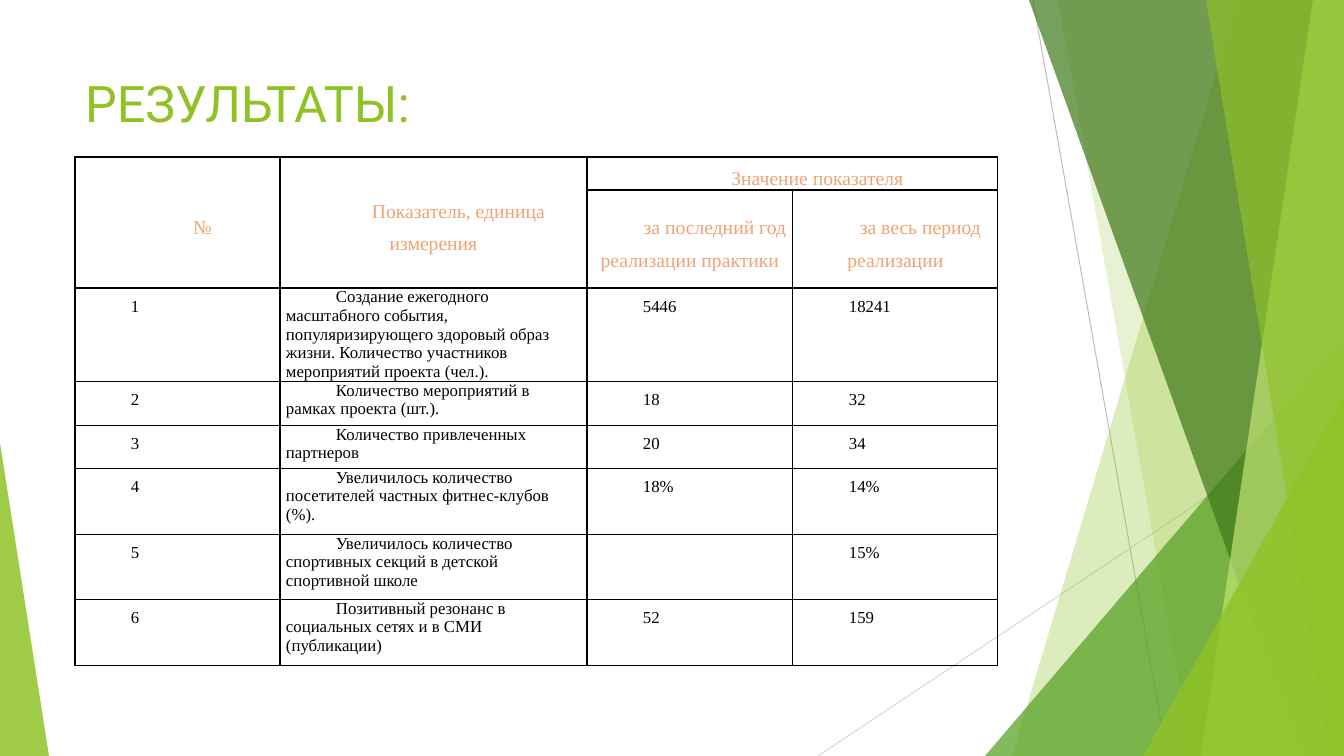
from lxml import etree
from pptx import Presentation, util as u
from pptx.dml.color import RGBColor
from pptx.enum import shapes as sh, text as tx
from pptx.oxml.ns import qn

PX = 12192000 / 1344
WIDE, TALL = 1344, 756

LIME = RGBColor(0x90, 0xC2, 0x26)
GREEN = RGBColor(0x54, 0xA0, 0x21)
DARK = RGBColor(0x3F, 0x78, 0x19)
PALE = RGBColor(0xC0, 0xE4, 0x74)
GREY = RGBColor(0xBF, 0xBF, 0xBF)
LIGHT = RGBColor(0xD9, 0xD9, 0xD9)
PEACH = RGBColor(0xF1, 0xA3, 0x74)
BLACK = RGBColor(0, 0, 0)


def px(n):
    return u.Emu(round(n * PX))


def tint(shape, color, alpha):
    """Fill without outline; alpha is the opacity in percent."""
    shape.shadow.inherit = False
    shape.line.fill.background()
    shape.fill.solid()
    shape.fill.fore_color.rgb = color
    node = shape._element.spPr.find(".//" + qn("a:srgbClr"))
    etree.SubElement(node, qn("a:alpha")).set("val", str(alpha * 1000))


prs = Presentation()
prs.slide_width, prs.slide_height = px(WIDE), px(TALL)
slide = prs.slides.add_slide(prs.slide_layouts[5])
parts = slide.shapes

# Background lines and facets
for x1, y1, x2, y2, color in [
    (1033, 0, 1167, TALL, GREY),
    (WIDE, 406, 818, TALL, LIGHT),
]:
    line = parts.add_connector(sh.MSO_CONNECTOR.STRAIGHT, px(x1), px(y1), px(x2), px(y2))
    line.line.color.rgb = color
    line.line.width = u.Pt(0.75)
    etree.SubElement(line._element.spPr, qn("a:effectLst"))

# Facets at the right edge: (top x, bottom x), or (left, top) for a triangle
for kind, a, b, color, alpha in [
    ("band", 1238, 1012, LIME, 30),
    ("band", 1058, 1192, LIME, 20),
    ("peak", 985, 336, GREEN, 72),
    ("band", 1029, 1301, DARK, 70),
    ("band", 1313, 1201, PALE, 70),
    ("band", 1206, 1329, LIME, 65),
    ("peak", 1143, 396, LIME, 80),
]:
    if kind == "band":
        path = parts.build_freeform(a, 0, scale=PX)
        path.add_line_segments([(WIDE, 0), (WIDE, TALL), (b, TALL)])
        facet = path.convert_to_shape()
    else:
        facet = parts.add_shape(sh.MSO_SHAPE.ISOSCELES_TRIANGLE,
                                px(a), px(b), px(WIDE - a), px(TALL - b))
        facet.adjustments[0] = 1
    tint(facet, color, alpha)

wedge = parts.add_shape(sh.MSO_SHAPE.ISOSCELES_TRIANGLE, 0, px(443), px(49), px(TALL - 443))
wedge.adjustments[0] = 0
tint(wedge, LIME, 85)

# Title
title = parts.title
title.left, title.top, title.width, title.height = px(75), px(67), px(947), px(145)
frame = title.text_frame
frame.text = "РЕЗУЛЬТАТЫ:"
frame.vertical_anchor = tx.MSO_ANCHOR.TOP
head = frame.paragraphs[0]
head.alignment = tx.PP_ALIGN.LEFT
head.font.name, head.font.size = "Roboto", u.Pt(36)
head.font.color.rgb = LIME

# Results table
ROWS = [
    ("№", "Показатель, единица измерения", "Значение показателя", ""),
    ("", "", "за последний год реализации практики", "за весь период реализации"),
    ("1", "Создание ежегодного масштабного события, популяризирующего здоровый образ жизни. "
          "Количество участников мероприятий проекта (чел.).", "5446", "18241"),
    ("2", "Количество мероприятий в рамках проекта (шт.).", "18", "32"),
    ("3", "Количество привлеченных партнеров", "20", "34"),
    ("4", "Увеличилось количество посетителей частных фитнес-клубов (%).", "18%", "14%"),
    ("5", "Увеличилось количество спортивных секций в детской спортивной школе", "", "15%"),
    ("6", "Позитивный резонанс в социальных сетях и в СМИ (публикации)", "52", "159"),
]
COLS = [205, 307, 206, 205]
HIGH = [33, 98, 93, 44, 43, 66, 65, 66]

table = parts.add_table(len(ROWS), len(COLS), px(75), px(157), px(sum(COLS)), px(sum(HIGH))).table
table.first_row = table.horz_banding = False
for col, size in zip(table.columns, COLS):
    col.width = px(size)
for row, size in zip(table.rows, HIGH):
    row.height = px(size)

for r, row in enumerate(ROWS):
    for c, words in enumerate(row):
        cell = table.cell(r, c)
        cell.text = words
        cell.margin_left = cell.margin_right = px(6)
        cell.margin_top = cell.margin_bottom = 0
        cell.fill.background()
        para = cell.text_frame.paragraphs[0]
        para._p.get_or_add_pPr().set("indent", str(px(50)))
        para.font.name = "Times New Roman"
        if r < 2:
            para.alignment = tx.PP_ALIGN.CENTER
            para.font.size, para.font.color.rgb = u.Pt(14), PEACH
            if (r, c) != (0, 2):
                cell.vertical_anchor = tx.MSO_ANCHOR.MIDDLE
        else:
            para.font.size, para.font.color.rgb = u.Pt(12), BLACK
        if r < 2 or c != 1:
            para.line_spacing = 1.5
        props = cell._tc.get_or_add_tcPr()
        for i, side in enumerate(["lnL", "lnR", "lnT", "lnB"]):
            edge = etree.Element(qn("a:" + side), w=str(u.Pt(1)))
            fill = etree.SubElement(edge, qn("a:solidFill"))
            etree.SubElement(fill, qn("a:srgbClr")).set("val", str(BLACK))
            props.insert(i, edge)

for c in (0, 1):
    table.cell(0, c).merge(table.cell(1, c))
table.cell(0, 2).merge(table.cell(0, 3))

prs.save("out.pptx")
